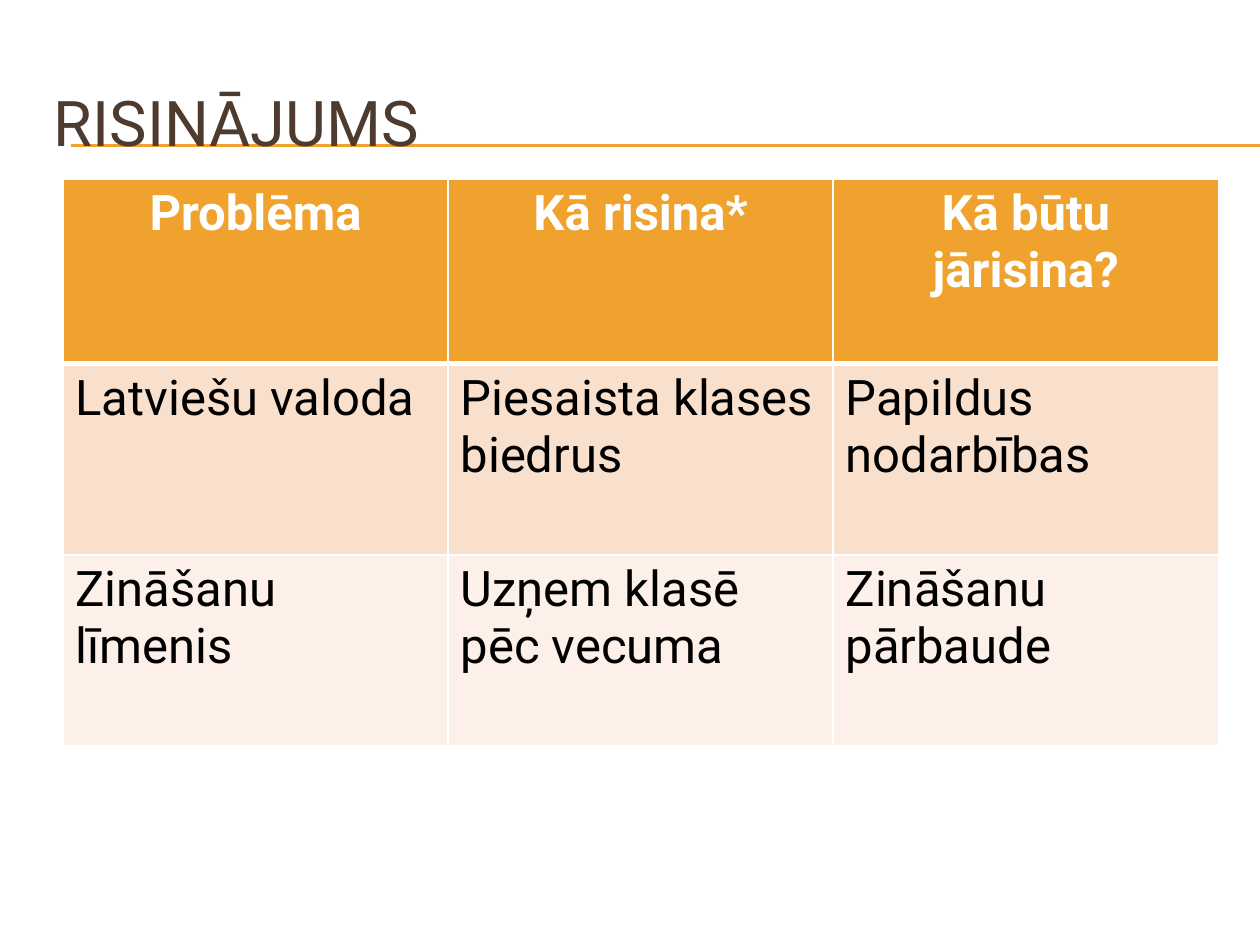
from lxml import etree
from pptx import Presentation, util as u
from pptx.dml.color import RGBColor
from pptx.enum import shapes, text
from pptx.oxml import ns

WIDTH, HEIGHT = u.Inches(10), u.Inches(7.5)
FONT = "Roboto"
ORANGE, BROWN, WHITE, BLACK = "F0A22E", "4E3B30", "FFFFFF", "000000"
ROW_FILLS = [ORANGE, "F9E0CD", "FCF0E8"]
ROW_HEIGHTS = [1.47, 1.52, 1.52]
ROWS = [
    ["Problēma", "Kā risina*", "Kā būtu jārisina?"],
    ["Latviešu valoda", "Piesaista klases biedrus", "Papildus nodarbības"],
    ["Zināšanu līmenis", "Uzņem klasē pēc vecuma", "Zināšanu pārbaude"],
]


def color(value):
    return RGBColor.from_string(value)


def style(para, size, value, bold=False):
    font = para.font
    font.name, font.size, font.bold = FONT, u.Pt(size), bold
    font.color.rgb = color(value)


def border(cell, side, points):
    line = etree.SubElement(cell._tc.get_or_add_tcPr(), ns.qn(f"a:ln{side}"),
                            w=str(u.Pt(points)))
    fill = etree.SubElement(line, ns.qn("a:solidFill"))
    etree.SubElement(fill, ns.qn("a:srgbClr"), val=WHITE)


def add_rules(page, left, right, heights):
    for y in heights:
        rule = page.shapes.add_connector(shapes.MSO_CONNECTOR.STRAIGHT, left, y, right, y)
        rule.line.color.rgb = color(ORANGE)
        rule.line.width = u.Pt(0.75)
        etree.SubElement(rule._element.spPr, ns.qn("a:effectLst"))


def add_title(page, left, top, width, height, words):
    box = page.shapes.add_textbox(left, top, width, height)
    frame = box.text_frame
    frame.word_wrap = True
    frame.vertical_anchor = text.MSO_ANCHOR.MIDDLE
    frame.text = words
    style(frame.paragraphs[0], 36, BROWN)


def add_solutions(page, left, top, width, height):
    table = page.shapes.add_table(len(ROWS), len(ROWS[0]), left, top, width, height).table
    for column in table.columns:
        column.width = width // len(ROWS[0])
    for r, words in enumerate(ROWS):
        table.rows[r].height = int(height * ROW_HEIGHTS[r] / sum(ROW_HEIGHTS))
        header = r == 0
        for c, word in enumerate(words):
            cell = table.cell(r, c)
            # Thick line between the header and the body
            for side in "LRTB":
                thick = (header and side == "B") or (r == 1 and side == "T")
                border(cell, side, 3 if thick else 1)
            cell.fill.solid()
            cell.fill.fore_color.rgb = color(ROW_FILLS[r])
            cell.text = word
            para = cell.text_frame.paragraphs[0]
            para.alignment = text.PP_ALIGN.CENTER if header else text.PP_ALIGN.LEFT
            style(para, 28, WHITE if header else BLACK, header)


def main():
    deck = Presentation()
    deck.slide_width, deck.slide_height = WIDTH, HEIGHT
    page = deck.slides.add_slide(deck.slide_layouts[6])
    # Double rule under the title
    add_rules(page, u.Inches(0.56), WIDTH, [u.Inches(1.15), u.Inches(1.16)])
    add_title(page, u.Inches(0.33), u.Inches(0.5), u.Inches(9.5), u.Inches(0.92), "RISINĀJUMS")
    # Problems and solutions
    add_solutions(page, u.Inches(0.5), u.Inches(1.42), u.Inches(9.17), u.Inches(4.5))
    deck.save("out.pptx")


if __name__ == "__main__":
    main()
